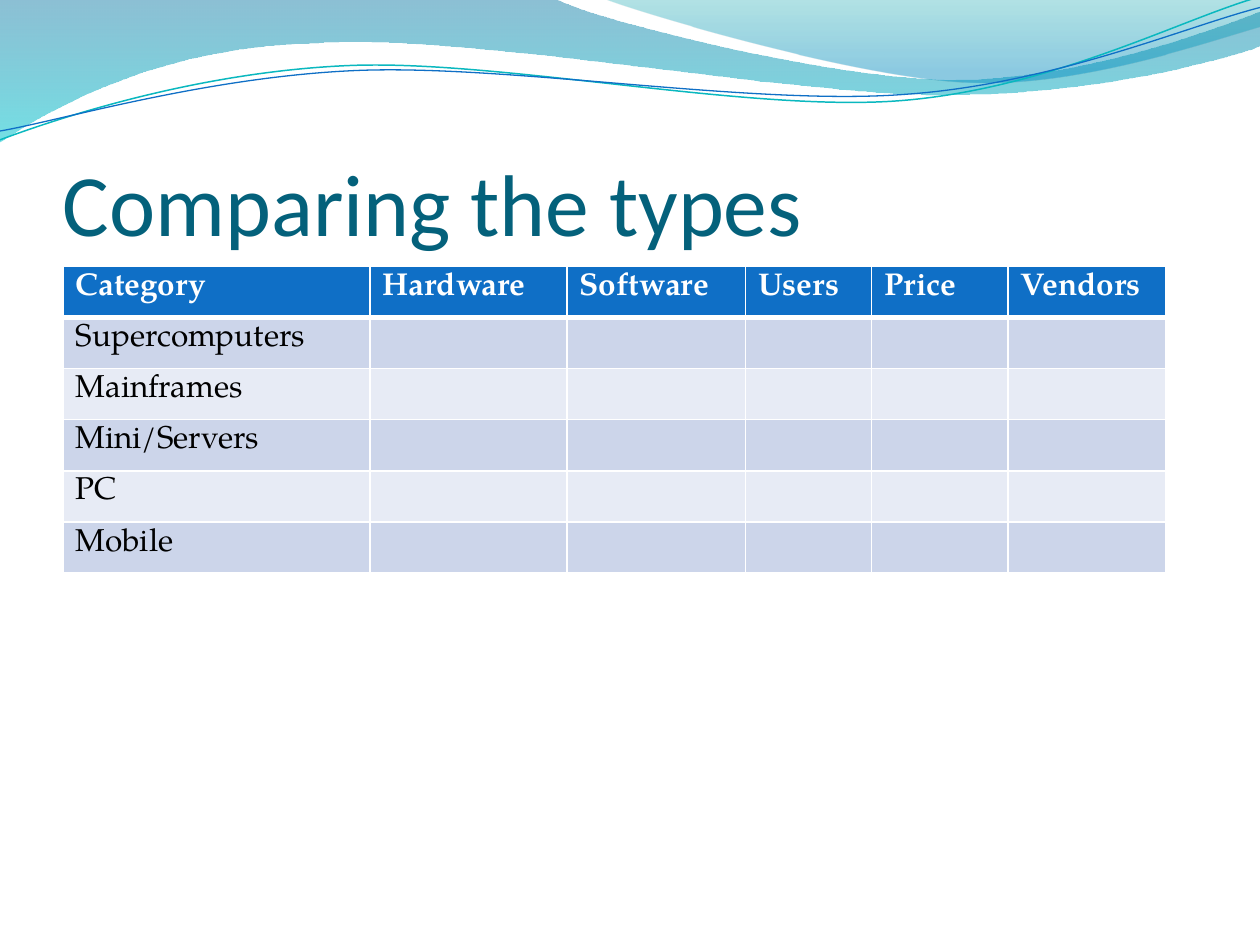
from math import cos, radians, sin

from lxml import etree
from pptx import Presentation
from pptx.dml.color import RGBColor
from pptx.enum.text import MSO_ANCHOR
from pptx.oxml.ns import qn
from pptx.util import Cm, Pt

WHITE = RGBColor(0xFF, 0xFF, 0xFF)
BLACK = RGBColor(0x00, 0x00, 0x00)
TITLE_TEAL = RGBColor(0x04, 0x61, 0x7B)
BLUE = RGBColor(0x0F, 0x6F, 0xC6)
TURQUOISE = RGBColor(0x0A, 0xB8, 0xBF)
DEEP_BLUE = RGBColor(0x00, 0x74, 0xA1)
CYAN = RGBColor(0x00, 0xC6, 0xCF)
SEA_GREEN = RGBColor(0x00, 0xA1, 0xA9)
SKY_BLUE = RGBColor(0x00, 0x8B, 0xBF)
BAND_DARK = RGBColor(0xCC, 0xD5, 0xEA)
BAND_LIGHT = RGBColor(0xE7, 0xEB, 0xF5)

CM_PER_INCH = 2.54
LINE_TILT = -2.7

# Outlines in inches: a pair is a straight step, six numbers are a Bézier curve.
WIDE_WAVE = [
    (0, 0), (4.4, -0.01),
    (4.76, 0.17, 6.64, 0.63, 7.58, 0.63), (8.53, 0.63, 9.58, 0.26, 10, 0.09),
    (10.01, 0.36),
    (9.83, 0.44, 8.7, 0.76, 7.46, 0.75), (6.22, 0.75, 3.82, 0.28, 2.57, 0.34),
    (1.29, 0.36, 0.46, 0.83, -0.01, 1.13), (0, 0),
]
RIGHT_WAVE = [
    (4.79, -0.01),
    (5.09, 0.11, 6.82, 0.62, 7.69, 0.65), (8.56, 0.69, 9.61, 0.32, 10, 0.21),
    (10, 0), (4.79, -0.01),
]
TURQUOISE_LINE = [
    (0, 1.11),
    (0.48, 0.93, 1.58, 0.57, 2.77, 0.52), (3.95, 0.47, 5.93, 0.89, 7.13, 0.8),
    (8.33, 0.71, 9.38, 0.15, 9.98, -0.02),
]
BLUE_LINE = [
    (0, 1.04),
    (0.47, 0.96, 1.64, 0.61, 2.83, 0.56), (4.03, 0.51, 5.97, 0.84, 7.17, 0.75),
    (8.36, 0.67, 9.41, 0.21, 10, 0.06),
]

HEADINGS = ["Category", "Hardware", "Software", "Users", "Price", "Vendors"]
CATEGORIES = ["Supercomputers", "Mainframes", "Mini/Servers", "PC", "Mobile"]
COLUMN_WIDTHS = [6.19, 3.97, 3.6, 2.54, 2.75, 3.18]
ROW_HEIGHT = 1.03


def step_points(step):
    return list(zip(step[::2], step[1::2]))


def turn(points, center, degrees):
    """Turn points clockwise about a center."""
    c, s = cos(radians(degrees)), sin(radians(degrees))
    offsets = [(x - center[0], y - center[1]) for x, y in points]
    return [(center[0] + x * c - y * s, center[1] + x * s + y * c) for x, y in offsets]


def bend(shape, steps):
    """Join the straight segments of each six-number step into one curve."""
    segments = iter(list(shape._element.iter(qn("a:lnTo"))))
    for step in steps:
        first = next(segments)
        if len(step) == 6:
            first.addprevious(curve := etree.Element(qn("a:cubicBezTo")))
            for segment in (first, next(segments), next(segments)):
                curve.append(segment[0])
                segment.getparent().remove(segment)


def add_outline(page, outline, close, center=(0, 0), tilt=0):
    points = [point for step in outline for point in step_points(step)]
    corners = [(Cm(x * CM_PER_INCH), Cm(y * CM_PER_INCH))
               for x, y in turn(points, center, -tilt)]
    builder = page.shapes.build_freeform(*corners[0])
    builder.add_line_segments(corners[1:], close=close)
    shape = builder.convert_to_shape()
    bend(shape, outline[1:])
    shape.rotation = tilt
    shape.shadow.inherit = False
    return shape


def add_wave(page, outline, stops):
    """Add a borderless wave; stops are (position, colour, opacity percent)."""
    wave = add_outline(page, outline, close=True)
    wave.line.fill.background()
    wave.fill.gradient()
    wave.fill.gradient_angle = 270
    for stop, (position, color, _) in zip(wave.fill.gradient_stops, stops):
        stop.position = position
        stop.color.rgb = color
    color_tags = wave._element.spPr.iter(qn("a:srgbClr"))
    for tag, (_, _, opacity) in zip(color_tags, stops):
        etree.SubElement(tag, qn("a:alpha"), val=str(opacity * 1000))


def add_wavy_line(page, outline, center, color, width):
    curve = add_outline(page, outline, False, center, LINE_TILT)
    curve.fill.background()
    curve.line.color.rgb = color
    curve.line.width = Pt(width)


def add_title(page, text):
    box = page.shapes.add_textbox(Cm(1.27), Cm(1.95), Cm(22.86), Cm(3.17))
    frame = box.text_frame
    frame.word_wrap = True
    frame.vertical_anchor = MSO_ANCHOR.BOTTOM
    frame.margin_left = frame.margin_right = frame.margin_bottom = 0
    para = frame.paragraphs[0]
    para.text = text
    para.font.size = Pt(50)
    para.font.name = "Calibri"
    para.font.color.rgb = TITLE_TEAL


def set_borders(cell, bottom_width):
    properties = cell._tc.get_or_add_tcPr()
    widths = {"a:lnL": 1, "a:lnR": 1, "a:lnT": 1, "a:lnB": bottom_width}
    for index, (side, width) in enumerate(widths.items()):
        line = etree.Element(qn(side), w=str(Pt(width)))
        fill = etree.SubElement(line, qn("a:solidFill"))
        etree.SubElement(fill, qn("a:srgbClr"), val=str(WHITE))
        properties.insert(index, line)


def style_cell(cell, text, fill, color, bold):
    cell.fill.solid()
    cell.fill.fore_color.rgb = fill
    set_borders(cell, bottom_width=3 if bold else 1)
    if text:
        cell.text = text
        font = cell.text_frame.paragraphs[0].font
        font.size = Pt(18)
        font.name = "TeX Gyre Pagella"
        font.bold = bold
        font.color.rgb = color


def add_comparison_table(page):
    blanks = [""] * (len(HEADINGS) - 1)
    rows = [HEADINGS] + [[category] + blanks for category in CATEGORIES]
    table = page.shapes.add_table(
        len(rows), len(HEADINGS), Cm(1.27), Cm(5.37),
        Cm(sum(COLUMN_WIDTHS)), Cm(ROW_HEIGHT * len(rows))).table
    for column, width in zip(table.columns, COLUMN_WIDTHS):
        column.width = Cm(width)
    for r, texts in enumerate(rows):
        table.rows[r].height = Cm(ROW_HEIGHT)
        header = r == 0
        fill = BLUE if header else BAND_DARK if r % 2 else BAND_LIGHT
        for c, text in enumerate(texts):
            style_cell(table.cell(r, c), text, fill, WHITE if header else BLACK, header)


def main():
    deck = Presentation()
    deck.slide_width, deck.slide_height = Cm(25.4), Cm(19.05)
    page = deck.slides.add_slide(deck.slide_layouts[6])
    add_wave(page, WIDE_WAVE, [(0, DEEP_BLUE, 45), (1, CYAN, 55)])
    add_wave(page, RIGHT_WAVE, [(0, SEA_GREEN, 30), (0.8, SKY_BLUE, 45)])
    add_wavy_line(page, TURQUOISE_LINE, (4.99, 0.58), TURQUOISE, 0.85)
    add_wavy_line(page, BLUE_LINE, (5, 0.59), BLUE, 0.75)
    add_title(page, "Comparing the types")
    add_comparison_table(page)
    deck.save("out.pptx")


if __name__ == "__main__":
    main()
